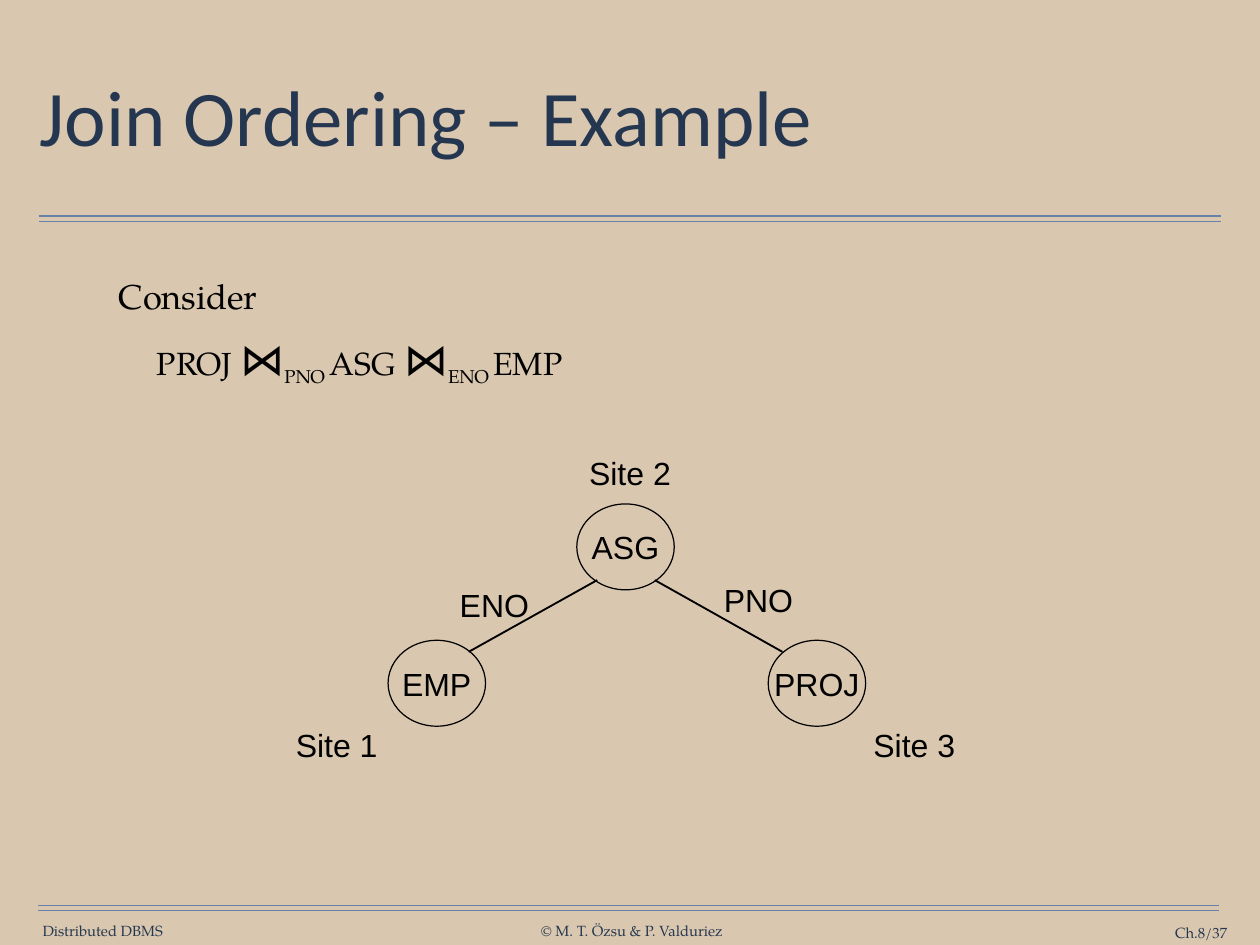
from lxml import etree
from pptx import Presentation
from pptx.dml.color import RGBColor
from pptx.enum.shapes import MSO_CONNECTOR, MSO_SHAPE
from pptx.enum.text import MSO_ANCHOR, PP_ALIGN
from pptx.oxml.ns import qn
from pptx.util import Inches, Pt

BACKGROUND, NAVY, RULE_BLUE, BLACK = "D9C8AF", "263750", "6682AA", "000000"
SERIF, SANS, TITLE_FONT, SYMBOL_FONT = "TeX Gyre Pagella", "Arial", "Calibri", "Noto Sans CJK JP"
NODE_WIDTH, NODE_HEIGHT = 1.1, 0.97


def color(hex_value):
    return RGBColor.from_string(hex_value)


def format_run(run, size, font_name, hex_value):
    run.font.size = Pt(size)
    run.font.name = font_name
    run.font.color.rgb = color(hex_value)


def set_frame(text_frame, inset, anchor, wrap):
    text_frame.margin_left = text_frame.margin_right = Inches(inset)
    text_frame.margin_top = text_frame.margin_bottom = Inches(inset)
    text_frame.vertical_anchor = anchor
    text_frame.word_wrap = wrap


def write_line(text_frame, text, size, font_name, hex_value, alignment):
    text_frame.text = text
    paragraph = text_frame.paragraphs[0]
    paragraph.alignment = alignment
    format_run(paragraph.runs[0], size, font_name, hex_value)
    return paragraph


def add_text(slide, box, text, size, font_name, hex_value,
             alignment=PP_ALIGN.CENTER, inset=0, wrap=False):
    shape = slide.shapes.add_textbox(*map(Inches, box))
    set_frame(shape.text_frame, inset, MSO_ANCHOR.MIDDLE, wrap)
    return write_line(shape.text_frame, text, size, font_name, hex_value, alignment)


def add_line(slide, start, end, hex_value, width):
    connector = slide.shapes.add_connector(
        MSO_CONNECTOR.STRAIGHT, *map(Inches, (*start, *end)))
    connector.line.color.rgb = color(hex_value)
    connector.line.width = Pt(width)
    etree.SubElement(connector._element.spPr, qn("a:effectLst"))


def add_double_rule(slide, left, top, width):
    for y in (top, top + 0.06):
        add_line(slide, (left, y), (left + width, y), RULE_BLUE, 1)


def add_title(slide, box):
    left, top, width, height = box
    paragraph = add_text(slide, box, "Join Ordering – Example", 64, TITLE_FONT, "253750",
                         PP_ALIGN.LEFT, 0.06, True)
    paragraph.line_spacing = 0.9
    add_double_rule(slide, left + 0.05, top + height + 0.19, 13.34)


def add_footer(slide, box):
    left, top, width, height = box
    add_double_rule(slide, left, top, width)
    text_top = top + 0.19
    add_text(slide, (left + 0.04, text_top, 1.38, height), "Distributed DBMS", 12, SERIF, NAVY)
    add_text(slide, (left + 5.66, text_top, 2.08, height),
             "© M. T. Özsu & P. Valduriez", 12, SERIF, NAVY)
    add_text(slide, (left + 11.88, text_top + 0.02, 1.54, height), "Ch.8/37", 12, SERIF, NAVY,
             PP_ALIGN.RIGHT, wrap=True)


def add_join_symbol(paragraph):
    run = paragraph.add_run()
    run.text = "⋈"
    format_run(run, 36, SYMBOL_FONT, BLACK)
    for tag in ("a:ea", "a:sym"):
        etree.SubElement(run.font._element, qn(tag), typeface=SYMBOL_FONT)


def add_query(slide, box):
    shape = slide.shapes.add_textbox(*map(Inches, box))
    text_frame = shape.text_frame
    set_frame(text_frame, 0.06, MSO_ANCHOR.TOP, True)
    write_line(text_frame, "Consider", 28, SERIF, BLACK, PP_ALIGN.LEFT)
    paragraph = text_frame.add_paragraph()
    paragraph.space_before = Pt(12)
    properties = paragraph._p.get_or_add_pPr()
    properties.set("marL", str(Inches(0.83)))
    properties.set("indent", str(Inches(-0.4)))
    for attribute, relation in ((None, "PROJ "), ("PNO ", "ASG "), ("ENO ", "EMP")):
        if attribute:
            add_join_symbol(paragraph)
            subscript = paragraph.add_run()
            subscript.text = attribute
            format_run(subscript, 26, SERIF, BLACK)
            subscript.font._element.set("baseline", "-25000")
        run = paragraph.add_run()
        run.text = relation
        format_run(run, 26, SERIF, BLACK)


def add_node(slide, left, top, name):
    shape = slide.shapes.add_shape(
        MSO_SHAPE.OVAL, *map(Inches, (left, top, NODE_WIDTH, NODE_HEIGHT)))
    shape.shadow.inherit = False
    shape.fill.background()
    shape.line.color.rgb = color(BLACK)
    shape.line.width = Pt(1)
    set_frame(shape.text_frame, 0, MSO_ANCHOR.MIDDLE, False)
    write_line(shape.text_frame, name, 26, SANS, BLACK, PP_ALIGN.CENTER)


def add_join_graph(slide, box):
    left, top, width, height = box
    bottom = top + height
    middle = left + 3.32
    lower_top = bottom - 1.47
    edge_top, edge_bottom = top + 1.5, top + 2.31

    add_line(slide, (middle + 0.88, edge_top), (left + 5.64, edge_bottom), BLACK, 1.5)
    add_line(slide, (middle + 0.23, edge_top), (left + 2.1, edge_bottom), BLACK, 1.5)
    nodes = (("EMP", left + 1.19, lower_top), ("ASG", middle, top + 0.64),
             ("PROJ", left + 5.48, lower_top))
    for name, node_left, node_top in nodes:
        add_node(slide, node_left, node_top, name)

    labels = (("Site 1", left, bottom - 0.58), ("Site 2", middle - 0.01, top),
              ("Site 3", left + width - 1.22, bottom - 0.58),
              ("ENO", left + 1.78, top + 1.49), ("PNO", left + 4.76, top + 1.43))
    for text, label_left, label_top in labels:
        add_text(slide, (label_left, label_top, 1.22, 0.58), text, 26, SANS, BLACK)


def main():
    presentation = Presentation()
    presentation.slide_width = Inches(14.22)
    presentation.slide_height = Inches(10.67)
    slide = presentation.slides.add_slide(presentation.slide_layouts[6])
    slide.background.fill.solid()
    slide.background.fill.fore_color.rgb = color(BACKGROUND)
    add_title(slide, (0.39, 0.49, 13.44, 1.76))
    add_query(slide, (1.28, 3.05, 9.08, 1.79))
    add_join_graph(slide, (3.19, 5.05, 7.74, 3.65))
    add_footer(slide, (0.43, 10.22, 13.33, 0.2))
    presentation.save("out.pptx")


if __name__ == "__main__":
    main()
